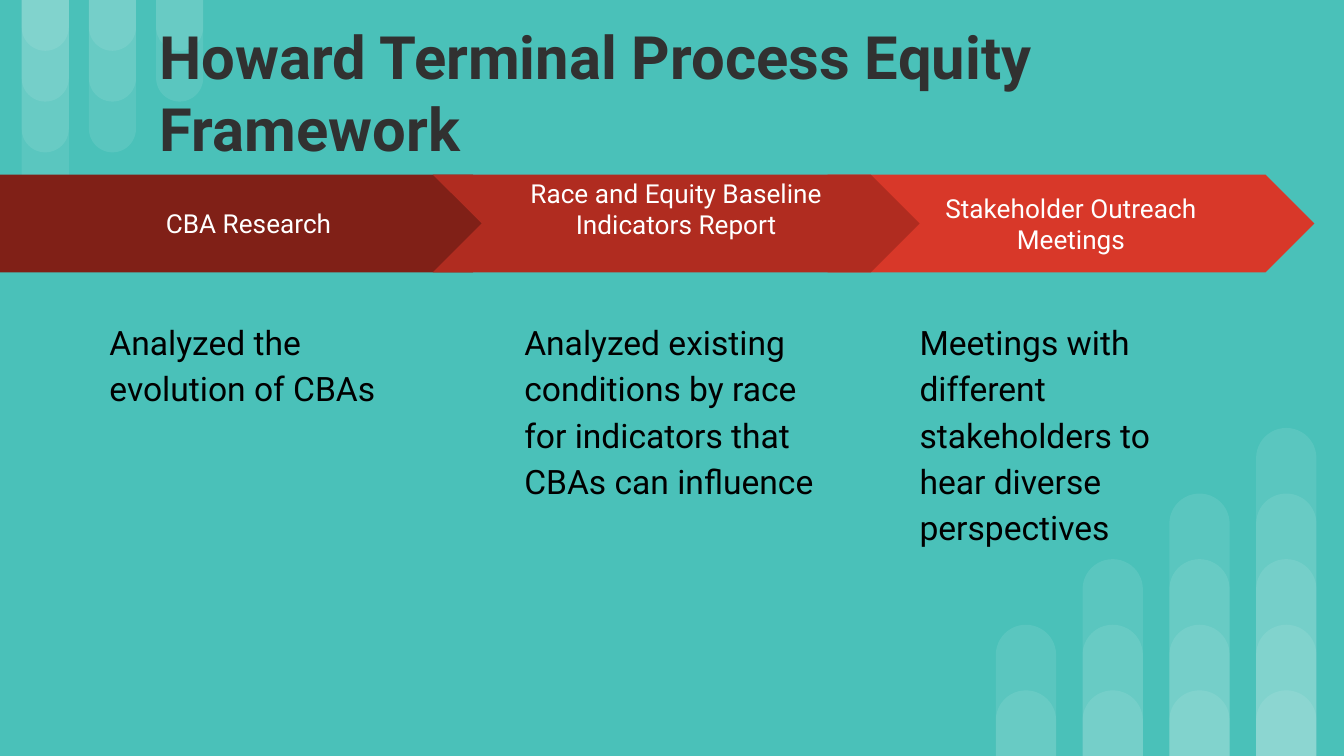
from dataclasses import dataclass

from lxml import etree
from pptx import Presentation
from pptx.dml.color import RGBColor
from pptx.enum.shapes import MSO_SHAPE
from pptx.enum.text import MSO_ANCHOR, PP_ALIGN
from pptx.oxml.ns import qn
from pptx.util import Cm, Pt

BAR = MSO_SHAPE.ROUND_2_SAME_RECTANGLE
CHEVRON = MSO_SHAPE.CHEVRON
HOME_PLATE = MSO_SHAPE.PENTAGON
TOP, MIDDLE = MSO_ANCHOR.TOP, MSO_ANCHOR.MIDDLE
LEFT, CENTER = PP_ALIGN.LEFT, PP_ALIGN.CENTER

TEAL = RGBColor(0x4A, 0xC1, 0xB9)
WHITE = RGBColor(0xFF, 0xFF, 0xFF)
BLACK = RGBColor(0x00, 0x00, 0x00)
CHARCOAL = RGBColor(0x31, 0x31, 0x31)
DARK_RED = RGBColor(0x80, 0x20, 0x17)
MID_RED = RGBColor(0xB0, 0x2C, 0x20)
BRIGHT_RED = RGBColor(0xD8, 0x38, 0x29)

FONT = "Roboto"
SLIDE_W, SLIDE_H = 25.4, 14.29
INSET = 0.25
ARROW_TOP, ARROW_H = 3.3, 1.85
DETAIL_TOP, DETAIL_W, DETAIL_H = 5.72, 6.22, 7.26


@dataclass(frozen=True)
class BarGroup:
    """Columns of stacked translucent bars; lengths in cm."""
    left: float
    pitch: float
    width: float
    step: float
    counts: tuple[int, ...]
    hanging: bool


@dataclass(frozen=True)
class Stage:
    """One arrow with its detail text; lengths in cm."""
    title: str
    detail: str
    kind: int
    color: RGBColor
    left: float
    width: float
    detail_left: float
    top_inset: float = INSET
    bottom_inset: float = INSET


BAR_GROUPS = (
    BarGroup(0.41, 1.27, 0.89, 0.96, (4, 3, 2), True),
    BarGroup(18.82, 1.64, 1.14, 1.24, (2, 3, 4, 5), False),
)

# Listed from back to front
STAGES = (
    Stage("Stakeholder Outreach Meetings",
          "Meetings with different stakeholders to hear diverse perspectives",
          CHEVRON, BRIGHT_RED, 15.64, 9.2, 17.13),
    Stage("CBA Research", "Analyzed the evolution of CBAs",
          HOME_PLATE, DARK_RED, 0, 9.86, 1.82),
    Stage("Race and Equity Baseline Indicators Report",
          "Analyzed existing conditions by race for indicators that CBAs can influence",
          CHEVRON, MID_RED, 8.18, 9.2, 9.66, top_inset=0, bottom_inset=0.56),
)


def write_text(shape, text: str, *, size: float, color: RGBColor, bold: bool = False,
               align=LEFT, anchor=TOP, spacing: float = 1.0,
               top_inset: float = INSET, bottom_inset: float = INSET) -> None:
    frame = shape.text_frame
    frame.word_wrap = True
    frame.vertical_anchor = anchor
    frame.margin_left = frame.margin_right = Cm(INSET)
    frame.margin_top, frame.margin_bottom = Cm(top_inset), Cm(bottom_inset)
    paragraph = frame.paragraphs[0]
    paragraph.alignment = align
    paragraph.line_spacing = spacing
    run = paragraph.add_run()
    run.text = text
    run.font.name = FONT
    run.font.size = Pt(size)
    run.font.bold = bold
    run.font.color.rgb = color


def add_filled(slide, kind: int, left: float, top: float, width: float,
               height: float, color: RGBColor):
    shape = slide.shapes.add_shape(kind, Cm(left), Cm(top), Cm(width), Cm(height))
    shape.shadow.inherit = False
    shape.fill.solid()
    shape.fill.fore_color.rgb = color
    shape.line.fill.background()
    return shape


def draw_bars(slide, group: BarGroup) -> None:
    for column, count in enumerate(group.counts):
        for level in range(1, count + 1):
            height = level * group.step
            top = 0 if group.hanging else SLIDE_H - height
            bar = add_filled(slide, BAR, group.left + column * group.pitch, top,
                             group.width, height, WHITE)
            bar.adjustments[0] = 0.5
            bar.adjustments[1] = 0
            bar.rotation = 180 if group.hanging else 0
            tint = bar._element.spPr.find(qn("a:solidFill"))[0]
            etree.SubElement(tint, qn("a:alpha"), val="9000")


def draw_stage(slide, stage: Stage) -> None:
    arrow = add_filled(slide, stage.kind, stage.left, ARROW_TOP, stage.width,
                       ARROW_H, stage.color)
    arrow.adjustments[0] = 0.5
    write_text(arrow, stage.title, size=14, color=WHITE, align=CENTER, anchor=MIDDLE,
               top_inset=stage.top_inset, bottom_inset=stage.bottom_inset)
    detail = slide.shapes.add_textbox(Cm(stage.detail_left), Cm(DETAIL_TOP),
                                      Cm(DETAIL_W), Cm(DETAIL_H))
    write_text(detail, stage.detail, size=18, color=BLACK, spacing=1.15)


def main() -> None:
    deck = Presentation()
    deck.slide_width, deck.slide_height = Cm(SLIDE_W), Cm(SLIDE_H)
    slide = deck.slides.add_slide(deck.slide_layouts[6])
    slide.background.fill.solid()
    slide.background.fill.fore_color.rgb = TEAL

    # Decorative bars in two corners
    for group in BAR_GROUPS:
        draw_bars(slide, group)

    # Heading
    heading = slide.shapes.add_textbox(Cm(2.77), Cm(0.41), Cm(19.13), Cm(2.64))
    write_text(heading, "Howard Terminal Process Equity Framework",
               size=32, color=CHARCOAL, bold=True, anchor=MIDDLE)

    # Process arrows with details
    for stage in STAGES:
        draw_stage(slide, stage)

    deck.save("out.pptx")


if __name__ == "__main__":
    main()
